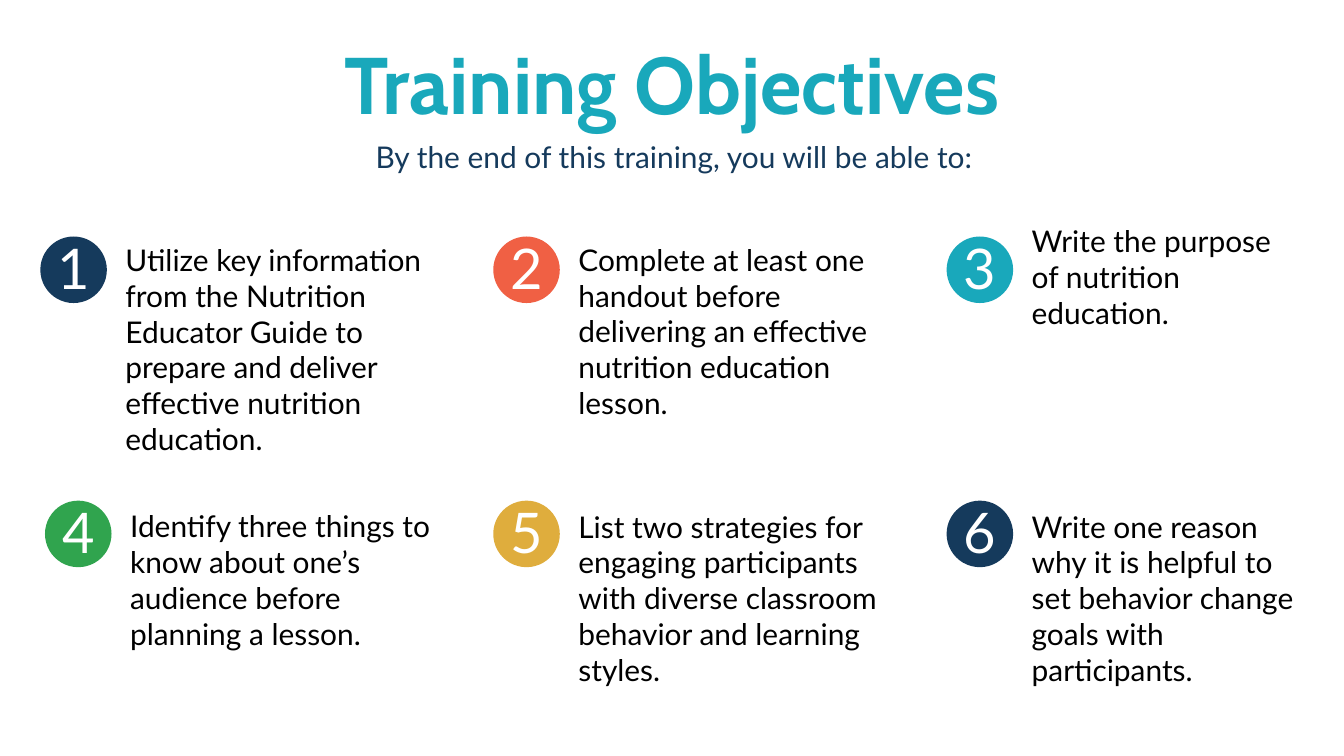
import pptx
import pptx.dml.color
import pptx.enum.shapes
import pptx.enum.text
import pptx.util

Pt = pptx.util.Pt
RGB = pptx.dml.color.RGBColor
ALIGN = pptx.enum.text.PP_ALIGN
ANCHOR = pptx.enum.text.MSO_ANCHOR
ROUND = pptx.enum.shapes.MSO_SHAPE.ROUNDED_RECTANGLE

NAVY = RGB(0x15, 0x3A, 0x5C)
CORAL = RGB(0xF0, 0x60, 0x44)
TEAL = RGB(0x19, 0xA8, 0xBB)
GREEN = RGB(0x30, 0xA4, 0x4E)
GOLD = RGB(0xDF, 0xAD, 0x3D)
BLACK = RGB(0, 0, 0)
WHITE = RGB(255, 255, 255)

DISC = 71.3
LINE = 38.75
HEAD = {"margin_left": Pt(10.8), "margin_right": Pt(10.8),
        "margin_top": Pt(5), "margin_bottom": Pt(5),
        "vertical_anchor": ANCHOR.TOP}
GOAL = {"margin_left": 0, "margin_right": 0, "margin_top": 0,
        "margin_bottom": 0, "vertical_anchor": ANCHOR.MIDDLE}
DIGIT = {"vertical_anchor": ANCHOR.MIDDLE}

ROWS = ((253.4, 257.8), (536.4, 543.6))
GOALS = (
    (0, 43.2, 339, 6, NAVY, "Utilize key information from the Nutrition "
     "Educator Guide to prepare and deliver effective nutrition education."),
    (0, 528.5, 345, 5, CORAL, "Complete at least one handout before "
     "delivering an effective nutrition education lesson."),
    (0, 1014.2, 291, 2, TEAL, "Write the purpose of nutrition education."),
    (1, 48.2, 335, 4, GREEN, "Identify three things to know about one’s "
     "audience before planning a lesson."),
    (1, 528.5, 345, 5, GOLD, "List two strategies for engaging participants "
     "with diverse classroom behavior and learning styles."),
    (1, 1014.2, 291, 5, NAVY, "Write one reason why it is helpful to set "
     "behavior change goals with participants."),
)


def apply(item, look):
    """Set each attribute in look on item."""
    for name, value in look.items():
        setattr(item, name, value)


def write(shape, text, size, color, align, frame, face="Lato", bold=False):
    """Put one formatted paragraph in a shape."""
    body = shape.text_frame
    body.text = text
    apply(body, {"word_wrap": True,
                 "auto_size": pptx.enum.text.MSO_AUTO_SIZE.NONE, **frame})
    para = body.paragraphs[0]
    apply(para, {"alignment": align, "space_before": Pt(0)})
    font = para.runs[0].font
    apply(font, {"name": face, "size": Pt(size), "bold": bold})
    font.color.rgb = color


def place(shape, left, top, width, height):
    """Move and size a placeholder."""
    apply(shape, {"left": Pt(left), "top": Pt(top),
                  "width": Pt(width), "height": Pt(height)})


def add_box(shapes, left, top, width, height):
    """Add an empty text box."""
    return shapes.add_textbox(Pt(left), Pt(top), Pt(width), Pt(height))


def add_disc(shapes, left, top, color):
    """Add a plain round badge."""
    disc = shapes.add_shape(ROUND, Pt(left), Pt(top), Pt(DISC), Pt(DISC))
    disc.adjustments[0] = 0.5
    disc.shadow.inherit = False
    disc.fill.solid()
    disc.fill.fore_color.rgb = color
    disc.line.fill.background()


def add_goal(slide, count, row, left, width, lines, color, text):
    """Add a badge with its number and objective."""
    top, start = ROWS[row]
    group = slide.shapes.add_group_shape()
    add_disc(group.shapes, left, top, color)
    box = add_box(group.shapes, left + 91.2, start, width, lines * LINE)
    write(box, text, 32, BLACK, ALIGN.LEFT, GOAL)
    box = add_box(slide.shapes, left + 2.9, top - 7, 65.5, 80)
    write(box, str(count), 60, WHITE, ALIGN.CENTER, DIGIT)


def main():
    """Build and save the slide."""
    deck = pptx.Presentation()
    apply(deck, {"slide_width": Pt(1440), "slide_height": Pt(810)})
    slide = deck.slides.add_slide(deck.slide_layouts[0])
    title, lead = slide.placeholders
    place(title, 166.5, 31.7, 1107, 115)
    write(title, "Training Objectives", 86, TEAL, ALIGN.CENTER, HEAD,
          "Cabin", True)
    place(lead, 307.5, 143.3, 829.5, 49.7)
    write(lead, "By the end of this training, you will be able to:", 32,
          NAVY, ALIGN.CENTER, HEAD)
    for count, goal in enumerate(GOALS, 1):
        add_goal(slide, count, *goal)
    deck.save("out.pptx")


if __name__ == "__main__":
    main()
